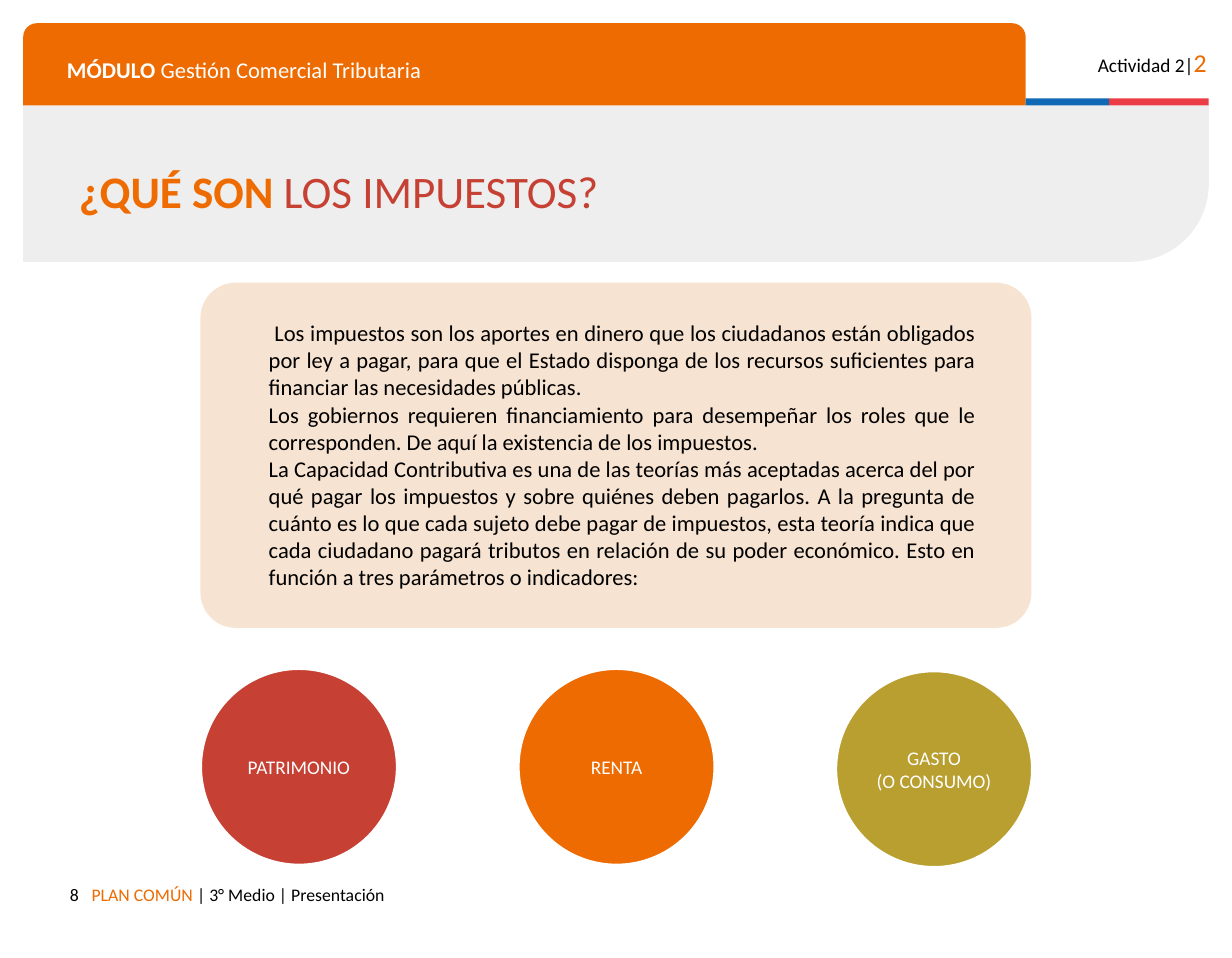
from pptx import Presentation
from pptx.dml.color import RGBColor
from pptx.enum import shapes, text
from pptx.util import Inches, Pt

COLOURS = {
    "orange": "ED6B00", "red": "C64033", "olive": "B99F2F", "peach": "F7E3D1",
    "grey": "EEEEEE", "blue": "0F69B4", "flag red": "EB3C46",
    "white": "FFFFFF", "black": "000000",
}
KIND = shapes.MSO_SHAPE
ALIGN = text.PP_ALIGN
MIDDLE, TOP = text.MSO_ANCHOR.MIDDLE, text.MSO_ANCHOR.TOP

# A paragraph is a list of runs: (wording, size, colour, bold)
TITLE = [[("¿QUÉ SON ", 28, "orange", True), ("LOS IMPUESTOS?", 28, "red", False)]]
BODY = [
    " Los impuestos son los aportes en dinero que los ciudadanos están obligados por ley a "
    "pagar, para que el Estado disponga de los recursos suficientes para financiar las "
    "necesidades públicas.",
    "Los gobiernos requieren financiamiento para desempeñar los roles que le corresponden. "
    "De aquí la existencia de los impuestos.",
    "La Capacidad Contributiva es una de las teorías más aceptadas acerca del por qué pagar "
    "los impuestos y sobre quiénes deben pagarlos. A la pregunta de cuánto es lo que cada "
    "sujeto debe pagar de impuestos, esta teoría indica que cada ciudadano pagará tributos "
    "en relación de su poder económico. Esto en función a tres parámetros o indicadores:",
]
# Kind, left, top, width, height, fill, corner adjustments, rotation
PANELS = [
    # The band is an upright rectangle turned so its round corner is at bottom right
    (KIND.ROUND_1_RECTANGLE, 4.64, -3.53, 1.35, 10.23, "grey", [0.5], 90),
    (KIND.ROUND_2_SAME_RECTANGLE, 0.2, 0.2, 8.65, 0.71, "orange", [0.167, 0], 0),
    (KIND.RECTANGLE, 8.85, 0.85, 0.72, 0.06, "blue", [], 0),
    (KIND.RECTANGLE, 9.57, 0.85, 0.86, 0.06, "flag red", [], 0),
    (KIND.ROUNDED_RECTANGLE, 1.73, 2.44, 7.17, 2.98, "peach", [0.102], 0),
]
# Left, top, width, height, paragraphs, alignment, anchor, left inset
LABELS = [
    (9.23, 0.3, 1.28, 0.38,
     [[("Actividad 2|", 12, "black", False), ("2", 16, "orange", False)]],
     ALIGN.RIGHT, TOP, 0.1),
    (0.48, 0.38, 8.14, 0.35,
     [[("MÓDULO", 14, "white", True), (" Gestión Comercial Tributaria", 14, "white", False)]],
     ALIGN.LEFT, TOP, 0.1),
    (0.41, 7.53, 7.42, 0.38,
     [[("PLAN COMÚN ", 11, "orange", False),
       ("| 3° Medio | Presentación", 11, "black", False)]],
     ALIGN.LEFT, TOP, 0.38),
    (0.2, 7.53, 0.58, 0.29, [[("8", 11, "black", False)]], ALIGN.RIGHT, TOP, 0.1),
    (2.22, 2.56, 6.3, 2.73, [[(line, 14, "black", False)] for line in BODY],
     ALIGN.JUSTIFY, MIDDLE, 0.1),
]
# Lines of wording, fill, top
INDICATORS = [
    (["PATRIMONIO"], "red", 5.77),
    (["RENTA"], "orange", 5.77),
    (["GASTO", "(O CONSUMO)"], "olive", 5.79),
]
CIRCLE_LEFT, CIRCLE_STEP, CIRCLE_SIZE = 1.73, 2.74, 1.7


def colour(name):
    return RGBColor.from_string(COLOURS[name])


def write(box, paragraphs, align, anchor, left_inset=0.1, inset=0.1, spacing=1.0):
    frame = box.text_frame
    frame_format = {
        "word_wrap": True, "auto_size": text.MSO_AUTO_SIZE.NONE, "vertical_anchor": anchor,
        "margin_left": Inches(left_inset), "margin_right": Inches(0.1),
        "margin_top": Inches(inset), "margin_bottom": Inches(inset),
    }
    for name, value in frame_format.items():
        setattr(frame, name, value)
    for index, runs in enumerate(paragraphs):
        para = frame.add_paragraph() if index else frame.paragraphs[0]
        para.alignment = align
        para.line_spacing = spacing
        para.space_before = Pt(0)
        for wording, size, shade, bold in runs:
            span = para.add_run()
            span.text = wording
            for name, value in {"name": "Calibri", "size": Pt(size), "bold": bold}.items():
                setattr(span.font, name, value)
            span.font.color.rgb = colour(shade)


def add_filled(page, kind, place, fill):
    shape = page.shapes.add_shape(kind, *map(Inches, place))
    shape.shadow.inherit = False
    shape.fill.solid()
    shape.fill.fore_color.rgb = colour(fill)
    shape.line.fill.background()
    return shape


def main():
    deck = Presentation()
    deck.slide_width, deck.slide_height = Inches(10.63), Inches(8.27)
    page = deck.slides.add_slide(deck.slide_layouts[5])

    for kind, *place, fill, corners, rotation in PANELS:
        panel = add_filled(page, kind, place, fill)
        panel.rotation = rotation
        for index, corner in enumerate(corners):
            panel.adjustments[index] = corner

    title = page.shapes.title
    page.shapes.element.append(title.element)  # bring in front of the band
    title.left, title.top, title.width, title.height = map(Inches, (0.49, 1.51, 9.79, 0.35))
    write(title, TITLE, ALIGN.LEFT, MIDDLE, left_inset=0.19, spacing=0.8)

    for *place, paragraphs, align, anchor, left_inset in LABELS:
        box = page.shapes.add_textbox(*map(Inches, place))
        write(box, paragraphs, align, anchor, left_inset)

    for index, (lines, fill, top) in enumerate(INDICATORS):
        place = (CIRCLE_LEFT + index * CIRCLE_STEP, top, CIRCLE_SIZE, CIRCLE_SIZE)
        circle = add_filled(page, KIND.OVAL, place, fill)
        circle.line.color.rgb = colour("white")
        circle.line.width = Pt(2)
        write(circle, [[(line, 12, "white", False)] for line in lines],
              ALIGN.CENTER, MIDDLE, inset=0.05)

    deck.save("out.pptx")


if __name__ == "__main__":
    main()
